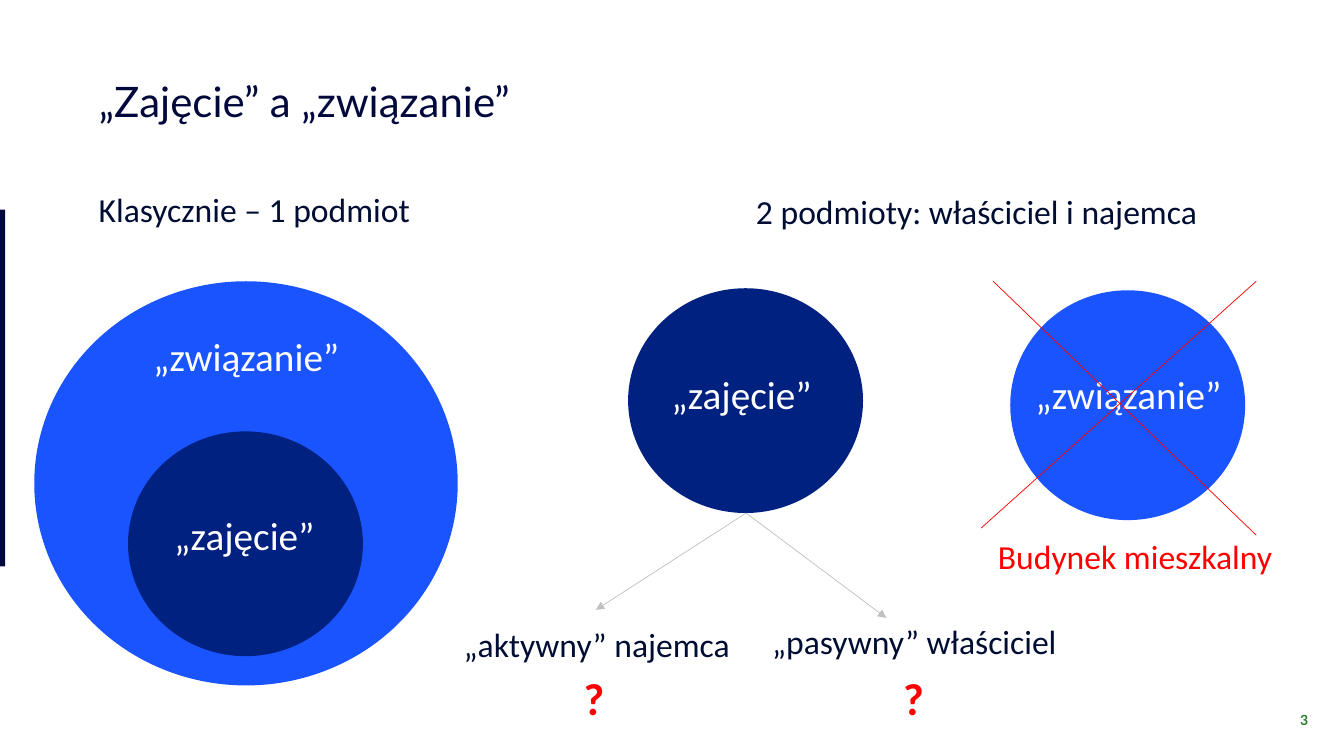
from dataclasses import dataclass

from lxml.etree import SubElement
from pptx import Presentation
from pptx.dml.color import RGBColor
from pptx.enum.shapes import MSO_CONNECTOR as Link, MSO_SHAPE as Preset
from pptx.enum.text import MSO_ANCHOR as Anchor, MSO_AUTO_SIZE as Fit, PP_ALIGN as Align
from pptx.oxml.ns import qn
from pptx.util import Pt

PX = 9144  # EMU per px, 100 px to the inch


@dataclass(frozen=True)
class Theme:
    navy: str = "00083D"
    title_ink: str = "01083C"
    ink: str = "000D33"
    binding: str = "1A54FF"
    seizure: str = "00217F"
    white: str = "FFFFFF"
    red: str = "FF0000"
    grey: str = "C0C0C0"
    green: str = "26802F"
    heading_font: str = "Lato"
    body_font: str = "Calibri"
    title_size: int = 30
    label_size: int = 28
    text_size: int = 24
    mark_size: int = 32
    number_size: int = 10
    line_width: float = 0.5


THEME = Theme()


@dataclass(frozen=True)
class Box:
    left: int
    top: int
    width: int
    height: int

    def emu(self) -> tuple[int, ...]:
        return tuple(v * PX for v in (self.left, self.top, self.width, self.height))


@dataclass(frozen=True)
class Caption:
    text: str
    box: Box
    size: int = THEME.text_size
    color: str = THEME.ink
    font: str = THEME.body_font
    bold: bool = False
    align: Align = Align.LEFT
    inset_x: int = 10
    inset_y: int = 5


@dataclass(frozen=True)
class Figure:
    box: Box
    color: str
    preset: Preset = Preset.OVAL


@dataclass(frozen=True)
class Line:
    start: tuple[int, int]
    end: tuple[int, int]
    color: str
    arrow: bool = False


def write(holder, caption: Caption) -> None:
    frame = holder.text_frame
    frame_format = {
        "text": caption.text, "word_wrap": True,
        "auto_size": Fit.SHAPE_TO_FIT_TEXT, "vertical_anchor": Anchor.TOP,
        "margin_left": caption.inset_x * PX, "margin_right": caption.inset_x * PX,
        "margin_top": caption.inset_y * PX, "margin_bottom": caption.inset_y * PX,
    }
    for name, value in frame_format.items():
        setattr(frame, name, value)
    paragraph = frame.paragraphs[0]
    paragraph.alignment = caption.align
    font = paragraph.runs[0].font
    font_format = {"name": caption.font, "size": Pt(caption.size), "bold": caption.bold}
    for name, value in font_format.items():
        setattr(font, name, value)
    font.color.rgb = RGBColor.from_string(caption.color)


def draw_caption(shapes, caption: Caption) -> None:
    write(shapes.add_textbox(*caption.box.emu()), caption)


def draw_title(title, caption: Caption) -> None:
    title.left, title.top, title.width, title.height = caption.box.emu()
    write(title, caption)


def draw_figure(shapes, figure: Figure) -> None:
    shape = shapes.add_shape(figure.preset, *figure.box.emu())
    shape.shadow.inherit = False
    shape.fill.solid()
    shape.fill.fore_color.rgb = RGBColor.from_string(figure.color)
    shape.line.fill.background()


def draw_line(shapes, line: Line) -> None:
    ends = (v * PX for v in line.start + line.end)
    connector = shapes.add_connector(Link.STRAIGHT, *ends)
    connector.line.width = Pt(THEME.line_width)
    connector.line.color.rgb = RGBColor.from_string(line.color)
    if line.arrow:
        SubElement(connector.line._get_or_add_ln(), qn("a:tailEnd"), type="triangle")
    SubElement(connector._element.spPr, qn("a:effectLst"))


DRAW = {Caption: draw_caption, Figure: draw_figure, Line: draw_line}


def label(text: str, left: int, top: int) -> Caption:
    return Caption(text, Box(left, top, 233, 57), THEME.label_size, THEME.white)


def question(left: int) -> Caption:
    return Caption("?", Box(left, 660, 71, 64), THEME.mark_size, THEME.red, bold=True)


TITLE = Caption("„Zajęcie” a „związanie”", Box(88, 70, 1158, 61),
                THEME.title_size, THEME.title_ink, THEME.heading_font)

# Edge bar and slide number
FURNITURE = [
    Figure(Box(0, 208, 5, 354), THEME.navy, Preset.RECTANGLE),
    Caption("3", Box(1259, 697, 69, 37), THEME.number_size, THEME.green,
            THEME.heading_font, True, Align.CENTER, 20, 10),
]

# One party: seizure lies inside binding
ONE_PARTY = [
    Figure(Box(34, 279, 420, 401), THEME.binding),
    Figure(Box(127, 428, 233, 223), THEME.seizure),
    label("„związanie”", 142, 325),
    label("„zajęcie”", 163, 502),
]

# Two parties: seizure splits, binding is crossed out
FORK = (740, 509)
TWO_PARTIES = [
    Caption("Klasycznie – 1 podmiot", Box(88, 183, 399, 50)),
    Caption("2 podmioty: właściciel i najemca", Box(740, 184, 554, 50)),
    Figure(Box(623, 286, 233, 223), THEME.seizure),
    label("„zajęcie”", 656, 362),
    Line(FORK, (591, 605), THEME.grey, arrow=True),
    Line(FORK, (879, 613), THEME.grey, arrow=True),
    Caption("„aktywny” najemca", Box(450, 614, 306, 50)),
    Caption("„pasywny” właściciel", Box(756, 611, 306, 50)),
    question(569),
    question(886),
    Figure(Box(1002, 288, 233, 228), THEME.binding),
    label("„związanie”", 1017, 362),
    Line((985, 279), (1246, 531), THEME.red),
    Line((973, 524), (1246, 279), THEME.red),
    Caption("Budynek mieszkalny", Box(980, 527, 306, 50), color=THEME.red),
]


def main() -> None:
    deck = Presentation()
    deck.slide_width, deck.slide_height = 1333 * PX, 750 * PX
    slide = deck.slides.add_slide(deck.slide_layouts[5])
    draw_title(slide.shapes.title, TITLE)
    for part in FURNITURE:
        DRAW[type(part)](slide.shapes, part)
    nested_circles = slide.shapes.add_group_shape()
    for part in ONE_PARTY:
        DRAW[type(part)](nested_circles.shapes, part)
    for part in TWO_PARTIES:
        DRAW[type(part)](slide.shapes, part)
    deck.save("out.pptx")


if __name__ == "__main__":
    main()
